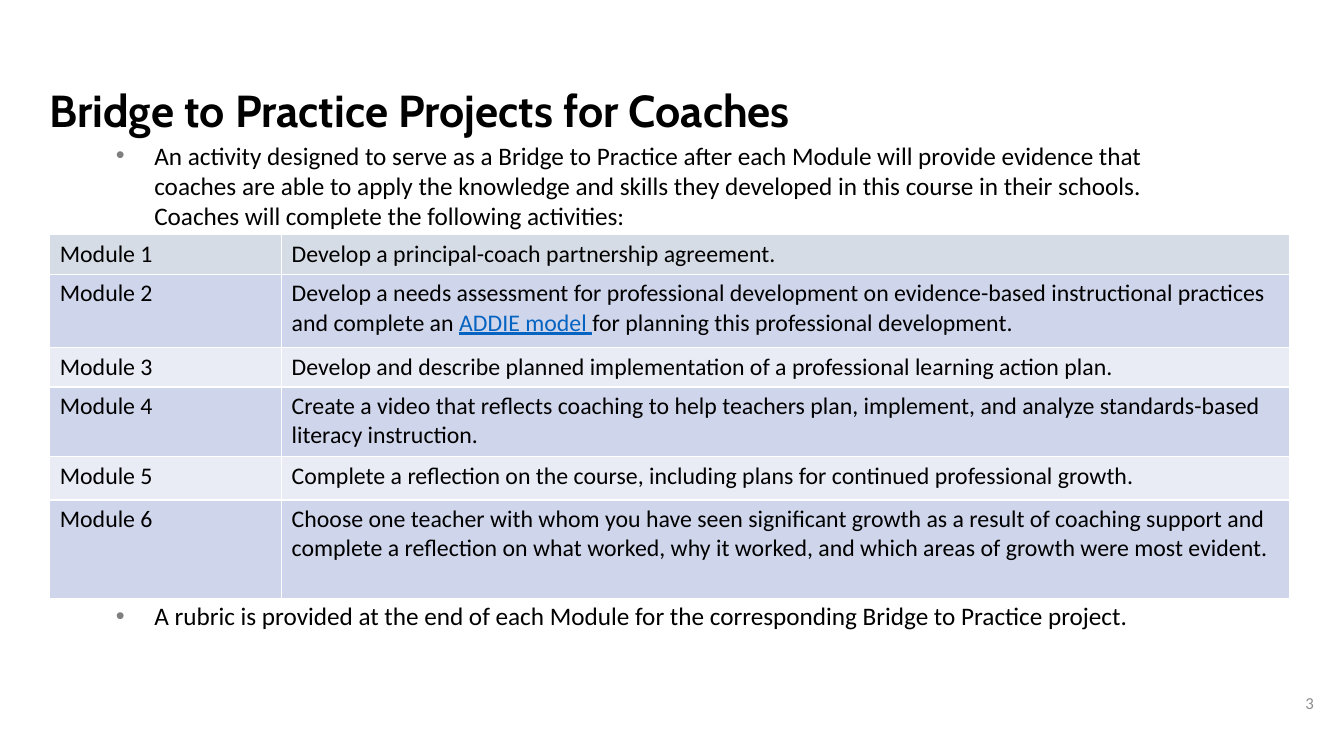
from lxml import etree
from pptx import Presentation
from pptx import util as u
from pptx.dml.color import RGBColor
from pptx.enum import text
from pptx.oxml import ns

COLORS = {
    "ink": "000000", "bullet": "7F7F7F", "number": "8C8C8C", "link": "0563C1",
    "first": "D6DCE5", "dark": "CFD5EA", "light": "E9EBF5", "border": "FFFFFF",
}
WIDTH, HEIGHT = u.Inches(13.33), u.Inches(7.5)
COL_WEIGHTS = [2.3, 10]
ROW_WEIGHTS = [0.39, 0.73, 0.39, 0.69, 0.43, 0.98]

TITLE = "Bridge to Practice Projects for Coaches"
INTRO = (
    "An activity designed to serve as a Bridge to Practice after each Module will "
    "provide evidence that coaches are able to apply the knowledge and skills they "
    "developed in this course in their schools. Coaches will complete the following "
    "activities:"
)
RUBRIC = ("A rubric is provided at the end of each Module for the corresponding "
          "Bridge to Practice project.")
ACTIVITIES = [
    ["Develop a principal-coach partnership agreement."],
    ["Develop a needs assessment for professional development on evidence-based "
     "instructional practices and complete an ", "ADDIE model ",
     "for planning this professional development."],
    ["Develop and describe planned implementation of a professional learning action plan."],
    ["Create a video that reflects coaching to help teachers plan, implement, and "
     "analyze standards-based literacy instruction."],
    ["Complete a reflection on the course, including plans for continued "
     "professional growth."],
    ["Choose one teacher with whom you have seen significant growth as a result of "
     "coaching support and complete a reflection on what worked, why it worked, and "
     "which areas of growth were most evident."],
]
LINKS = {"ADDIE model "}


def percent_box(left, top, width, height):
    return (int(WIDTH * left / 100), int(HEIGHT * top / 100),
            int(WIDTH * width / 100), int(HEIGHT * height / 100))


def add_text(p, words, size=18, font="Calibri", color="ink", bold=False, underline=False):
    r = p.add_run()
    r.text = words
    r.font.size = u.Pt(size)
    r.font.name = font
    r.font.bold = bold
    r.font.underline = underline
    r.font.color.rgb = RGBColor.from_string(COLORS[color])


def place(sp, box, anchor):
    sp.left, sp.top, sp.width, sp.height = box
    tf = sp.text_frame
    tf.word_wrap = True
    tf.auto_size = text.MSO_AUTO_SIZE.NONE
    tf.vertical_anchor = anchor
    return tf


def add_bullet(p):
    pPr = p._p.get_or_add_pPr()
    pPr.set("marL", str(u.Inches(0.38)))
    pPr.set("indent", str(-u.Inches(0.38)))
    color = etree.SubElement(pPr, ns.qn("a:buClr"))
    etree.SubElement(color, ns.qn("a:srgbClr"), val=COLORS["bullet"])
    etree.SubElement(pPr, ns.qn("a:buFont"), typeface="Arial")
    etree.SubElement(pPr, ns.qn("a:buChar"), char="•")


def add_borders(cell):
    tcPr = cell._tc.get_or_add_tcPr()
    for side in ("lnL", "lnR", "lnT", "lnB"):
        ln = etree.SubElement(tcPr, ns.qn(f"a:{side}"), w=str(u.Pt(1)))
        fill = etree.SubElement(ln, ns.qn("a:solidFill"))
        etree.SubElement(fill, ns.qn("a:srgbClr"), val=COLORS["border"])


def build_title(s, box):
    tf = place(s.shapes.title, box, text.MSO_ANCHOR.MIDDLE)
    p = tf.paragraphs[0]
    p.alignment = text.PP_ALIGN.LEFT
    add_text(p, TITLE, size=32, font="Cabin", bold=True)


def build_body(s, box):
    tf = place(s.placeholders[1], box, text.MSO_ANCHOR.TOP)
    table_gap = 264
    for p, words, gap in ((tf.paragraphs[0], INTRO, 0),
                          (tf.add_paragraph(), RUBRIC, table_gap)):
        add_bullet(p)
        p.space_before = u.Pt(gap)
        add_text(p, words)


def build_table(s, box):
    table = s.shapes.add_table(len(ROW_WEIGHTS), len(COL_WEIGHTS), *box).table
    table.first_row = table.horz_banding = False
    for col, weight in zip(table.columns, COL_WEIGHTS):
        col.width = int(box[2] * weight / sum(COL_WEIGHTS))
    for i, (row, weight) in enumerate(zip(table.rows, ROW_WEIGHTS)):
        row.height = int(box[3] * weight / sum(ROW_WEIGHTS))
        band = "first" if i == 0 else "dark" if i % 2 else "light"
        for cell, parts in zip(row.cells, ([f"Module {i + 1}"], ACTIVITIES[i])):
            add_borders(cell)
            cell.fill.solid()
            cell.fill.fore_color.rgb = RGBColor.from_string(COLORS[band])
            for words in parts:
                linked = words in LINKS
                add_text(cell.text_frame.paragraphs[0], words, size=17,
                         color="link" if linked else "ink", underline=linked)


def build_number(s, box):
    tf = place(s.shapes.add_textbox(*box), box, text.MSO_ANCHOR.MIDDLE)
    p = tf.paragraphs[0]
    p.alignment = text.PP_ALIGN.RIGHT
    add_text(p, "3", size=12, color="number")


def main():
    prs = Presentation()
    prs.slide_width, prs.slide_height = WIDTH, HEIGHT
    s = prs.slides.add_slide(prs.slide_layouts[1])
    build_number(s, percent_box(81.02, 90.93, 17.48, 4))
    build_title(s, percent_box(2.93, 8.27, 68.04, 12.53))
    build_body(s, percent_box(7.88, 17.87, 84.32, 66.67))
    build_table(s, percent_box(3.7, 31.07, 92.27, 48.13))
    prs.save("out.pptx")


if __name__ == "__main__":
    main()
